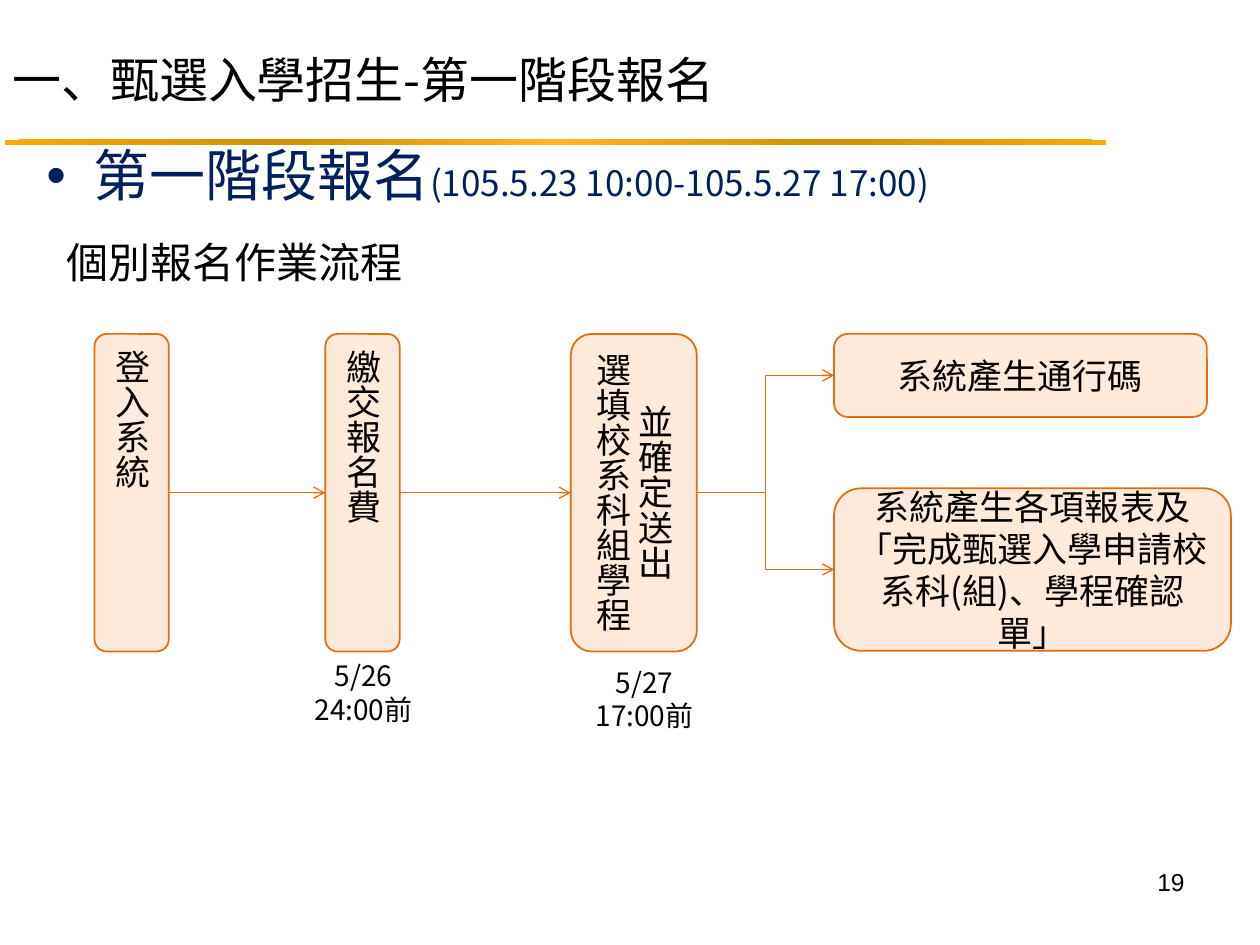
from lxml.etree import SubElement
from pptx import Presentation
from pptx.dml.color import RGBColor
from pptx.enum.shapes import MSO_CONNECTOR as LINK, MSO_SHAPE as SHAPE
from pptx.enum.text import MSO_ANCHOR as ANCHOR, PP_ALIGN as ALIGN
from pptx.oxml import parse_xml
from pptx.oxml.ns import nsdecls, qn
from pptx.util import Pt

CJK = "Noto Sans CJK SC"
BLACK, NAVY, ORANGE, PEACH = "000000", "002060", "E46C0A", "FDEADA"
STEP_TOP, STEP_HEIGHT = 190.8, 181.5


def color(value):
    return RGBColor.from_string(value)


def write(paragraph, text, size, align=ALIGN.LEFT, tone=BLACK, face=CJK):
    paragraph.add_run().text = text
    paragraph.alignment = align
    font = paragraph.font
    font.size, font.name = Pt(size), face
    font.color.rgb = color(tone)
    defaults = paragraph._p.pPr.find(qn("a:defRPr"))
    latin = defaults.find(qn("a:latin"))
    east = SubElement(defaults, qn("a:ea"), typeface=face)
    latin.addnext(east)


def text_frame(slide, box, anchor=ANCHOR.TOP):
    frame = slide.shapes.add_textbox(*map(Pt, box)).text_frame
    frame.word_wrap = True
    frame.vertical_anchor = anchor
    return frame


def rounded(slide, box, lines, size=20, aligns=(ALIGN.CENTER,), vertical=False, filled=True):
    panel = slide.shapes.add_shape(SHAPE.ROUNDED_RECTANGLE, *map(Pt, box))
    panel.shadow.inherit = False
    if filled:
        panel.fill.solid()
        panel.fill.fore_color.rgb = color(PEACH)
        panel.line.color.rgb = color(ORANGE)
        panel.line.width = Pt(1)
    else:
        panel.fill.background()
        panel.line.fill.background()
    frame = panel.text_frame
    frame.word_wrap = True
    frame.vertical_anchor = ANCHOR.MIDDLE
    if vertical:
        frame._txBody.bodyPr.set("vert", "eaVert")
        frame.margin_left = frame.margin_right = Pt(6)
    for index, line in enumerate(lines):
        paragraph = frame.add_paragraph() if index else frame.paragraphs[0]
        write(paragraph, line, size, aligns[min(index, len(aligns) - 1)])


def arrow(slide, start, end):
    kind = LINK.STRAIGHT if start[1] == end[1] else LINK.ELBOW
    link = slide.shapes.add_connector(kind, *map(Pt, start + end))
    link.line.color.rgb = color(ORANGE)
    link.line.width = Pt(0.75)
    SubElement(link.line._get_or_add_ln(), qn("a:tailEnd"), type="arrow")
    SubElement(link._element.spPr, qn("a:effectLst"))


def header(slide, box):
    left, top, width, height = box
    rule = slide.shapes.add_shape(SHAPE.RECTANGLE, Pt(left + 2.9), Pt(top + 59.8), Pt(629.3), Pt(2.9))
    rule.shadow.inherit = False
    rule.line.fill.background()
    stops = "".join(
        f'<a:gs pos="{place}"><a:srgbClr val="{tone}"/></a:gs>'
        for place, tone in ((0, "FFB41D"), (50000, "D09000"), (100000, "F7AB00")))
    rule._element.spPr.find(qn("a:prstGeom")).addnext(parse_xml(
        f'<a:gradFill {nsdecls("a")}><a:gsLst>{stops}</a:gsLst><a:path path="circle">'
        '<a:fillToRect l="50000" t="50000" r="50000" b="50000"/></a:path></a:gradFill>'))
    title = text_frame(slide, (left, top, width, height), ANCHOR.MIDDLE)
    write(title.paragraphs[0], "一、甄選入學招生-第一階段報名", 28)


def schedule(slide, box):
    frame = text_frame(slide, box)
    stage, process = frame.paragraphs[0], frame.add_paragraph()
    props = stage._p.get_or_add_pPr()
    props.set("marL", str(Pt(27)))
    props.set("indent", str(-Pt(27)))
    SubElement(props, qn("a:buFont"), typeface="Arial")
    SubElement(props, qn("a:buChar"), char="•")
    write(stage, "第一階段報名", 32, tone=NAVY)
    period = stage.add_run()
    period.text = "(105.5.23 10:00-105.5.27 17:00)"
    period.font.size = Pt(20)
    process._p.get_or_add_pPr().set("marL", str(Pt(11.6)))
    process.space_before = Pt(16)
    write(process, "個別報名作業流程", 24)


def flow(slide, left, top, height):
    middle = top + height / 2
    steps = [
        (0, 42.5, ["登入系統"], (ALIGN.LEFT,)),
        (131.9, 42.5, ["繳交報名費"], (ALIGN.LEFT,)),
        (272.2, 72, ["並確定送出", "選填校系科組學程"], (ALIGN.CENTER, ALIGN.LEFT)),
    ]
    results = [
        (0, 213.1, 47.5, ["系統產生通行碼"]),
        (88.2, 226.8, 92.9, ["系統產生各項報表及「完成甄選入學申請校系科(組)、學程確認單」"]),
    ]
    deadlines = [
        (115.2, 175.7, 77, 58.3, ["5/26 24:00前"]),
        (272.2, 178.6, 84.2, 59.8, ["5/27", "17:00前"]),
    ]
    for offset, width, lines, aligns in steps:
        rounded(slide, (left + offset, top, width, height), lines, aligns=aligns, vertical=True)
    for (offset, width, *_), (following, *_) in zip(steps, steps[1:]):
        arrow(slide, (left + offset + width, middle), (left + following, middle))
    last_offset, last_width, *_ = steps[-1]
    result_left = left + 422.6
    for drop, width, depth, lines in results:
        rounded(slide, (result_left, top + drop, width, depth), lines)
        arrow(slide, (left + last_offset + last_width, middle), (result_left, top + drop + depth / 2))
    for offset, drop, width, depth, lines in deadlines:
        rounded(slide, (left + offset, top + drop, width, depth), lines, size=16, filled=False)


def page_number(slide, box):
    write(text_frame(slide, box).paragraphs[0], "19", 14, ALIGN.RIGHT, face="Arial")


def main():
    deck = Presentation()
    deck.slide_width, deck.slide_height = Pt(720), Pt(540)
    slide = deck.slides.add_slide(deck.slide_layouts[6])
    header(slide, (0, 20.2, 648, 49.7))
    schedule(slide, (19.4, 77, 687.6, 102.2))
    flow(slide, 54, STEP_TOP, STEP_HEIGHT)
    page_number(slide, (516.2, 491.8, 167.8, 37.4))
    deck.save("out.pptx")


if __name__ == "__main__":
    main()
